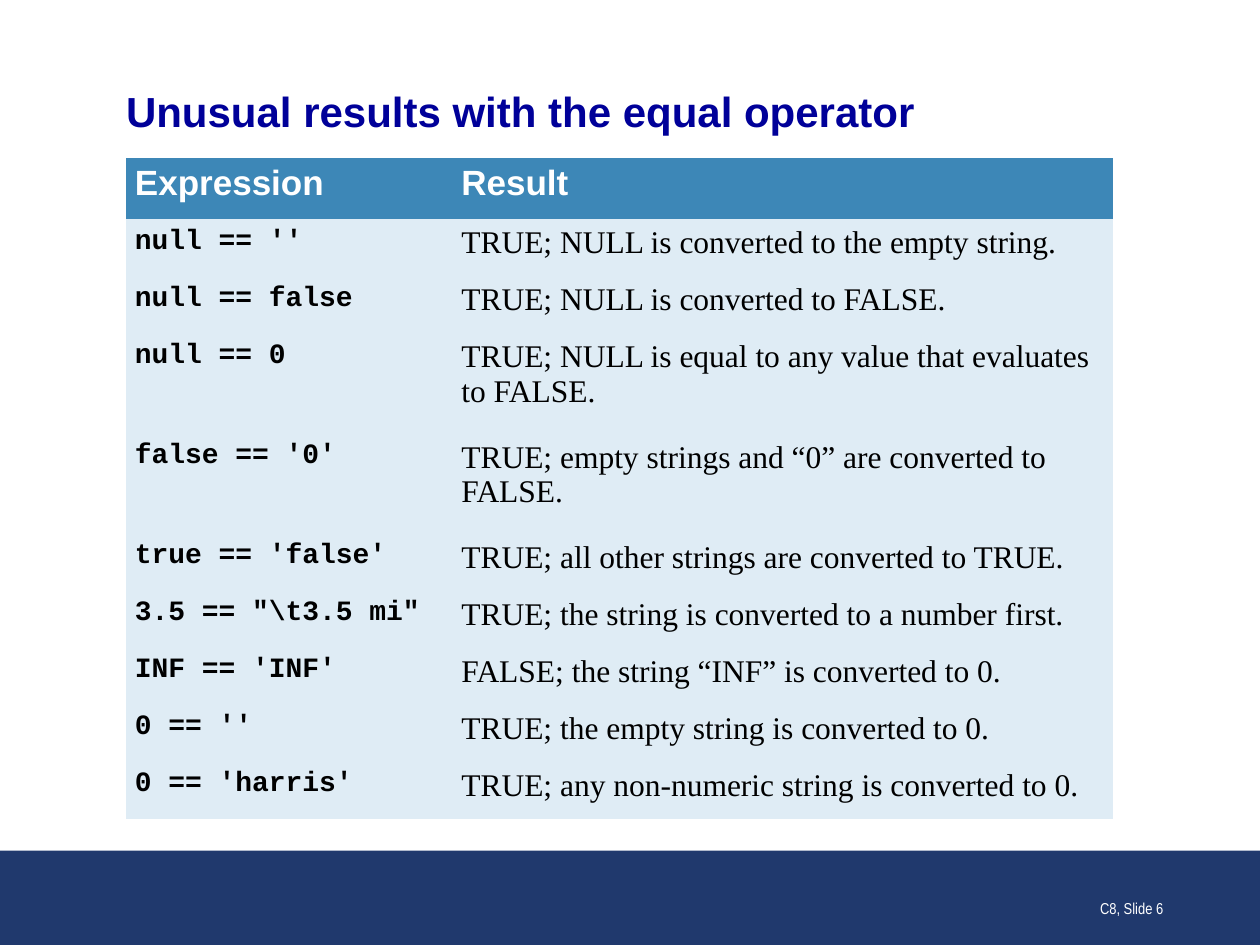
import pptx
import pptx.util
import pptx.dml.color
import pptx.enum.shapes
import pptx.enum.text

Cm = pptx.util.Cm
Pt = pptx.util.Pt
ALIGN = pptx.enum.text.PP_ALIGN
ANCHOR = pptx.enum.text.MSO_ANCHOR

TITLE = "Unusual results with the equal operator"
FOOTER = "C8, Slide 6"
HEADS = ("Expression", "Result")
ROWS = [
    ("null == ''", "TRUE; NULL is converted to the empty string."),
    ("null == false", "TRUE; NULL is converted to FALSE."),
    ("null == 0", "TRUE; NULL is equal to any value that evaluates to FALSE."),
    ("false == '0'", "TRUE; empty strings and “0” are converted to FALSE."),
    ("true == 'false'", "TRUE; all other strings are converted to TRUE."),
    ('3.5 == "\\t3.5 mi"', "TRUE; the string is converted to a number first."),
    ("INF == 'INF'", "FALSE; the string “INF” is converted to 0."),
    ("0 == ''", "TRUE; the empty string is converted to 0."),
    ("0 == 'harris'", "TRUE; any non-numeric string is converted to 0."),
]

THEME = {
    "title": ("Arial", 24, True, "000099"),
    "head": ("Arial", 20, True, "FFFFFF"),
    "code": ("Courier New", 16, True, "000000"),
    "body": ("Times New Roman", 18, False, "000000"),
    "foot": ("Arial Narrow", 9, False, "FFFFFF"),
    "band": "20396D",
    "header": "3D87B7",
    "cell": "DFECF5",
    "grid": "{2D5ABB26-0587-4C30-8999-92F81FD0307C}",
}
WIDTHS = (6.58, 13.31)
HEAD, LOW, TALL = 1.24, 1.15, 2.02
LIMIT = 48


def color(key):
    return pptx.dml.color.RGBColor.from_string(THEME.get(key, key))


def write(frame, text, style, align=ALIGN.LEFT):
    frame.text = text
    para = frame.paragraphs[0]
    para.alignment = align
    name, size, bold, ink = THEME[style]
    for run in para.runs:
        run.font.name = name
        run.font.size = Pt(size)
        run.font.bold = bold
        run.font.color.rgb = color(ink)


def fill(item, key):
    item.fill.solid()
    item.fill.fore_color.rgb = color(key)


def add_band(slide, width):
    band = slide.shapes.add_shape(
        pptx.enum.shapes.MSO_SHAPE.RECTANGLE, 0, Cm(17.15), width, Cm(1.9))
    band.shadow.inherit = False
    fill(band, "band")
    band.line.fill.background()


def add_title(slide):
    title = slide.shapes.title
    title.left, title.top = Cm(2.54), Cm(1.73)
    title.width, title.height = Cm(20.32), Cm(1.02)
    frame = title.text_frame
    frame.margin_left = frame.margin_right = 0
    frame.margin_top = frame.margin_bottom = 0
    frame.vertical_anchor = ANCHOR.MIDDLE
    frame.auto_size = pptx.enum.text.MSO_AUTO_SIZE.NONE
    write(frame, TITLE, "title")


def add_grid(slide):
    highs = [HEAD] + [TALL if len(note) > LIMIT else LOW for _, note in ROWS]
    table = slide.shapes.add_table(
        len(highs), len(WIDTHS), Cm(2.54), Cm(3.18),
        Cm(sum(WIDTHS)), Cm(sum(highs))).table
    table.horz_banding = False
    table._tbl.tblPr.find(pptx.oxml.ns.qn("a:tableStyleId")).text = THEME["grid"]
    for col, width in zip(table.columns, WIDTHS):
        col.width = Cm(width)
    for i, (row, high) in enumerate(zip(table.rows, highs)):
        row.height = Cm(high)
        texts = ROWS[i - 1] if i else HEADS
        styles = ("code", "body") if i else ("head", "head")
        for cell, text, style in zip(row.cells, texts, styles):
            cell.margin_left = cell.margin_right = Cm(0.18)
            cell.margin_top = cell.margin_bottom = Cm(0.13)
            fill(cell, "cell" if i else "header")
            write(cell.text_frame, text, style)


def add_footer(slide):
    box = slide.shapes.add_textbox(Cm(18.42), Cm(17.35), Cm(5.28), Cm(1.27))
    frame = box.text_frame
    frame.word_wrap = True
    frame.vertical_anchor = ANCHOR.BOTTOM
    write(frame, FOOTER, "foot", ALIGN.RIGHT)


def main():
    deck = pptx.Presentation()
    deck.slide_width, deck.slide_height = Cm(25.4), Cm(19.05)
    slide = deck.slides.add_slide(deck.slide_layouts[5])
    add_band(slide, deck.slide_width)
    add_title(slide)
    add_grid(slide)
    add_footer(slide)
    deck.save("out.pptx")


if __name__ == "__main__":
    main()
